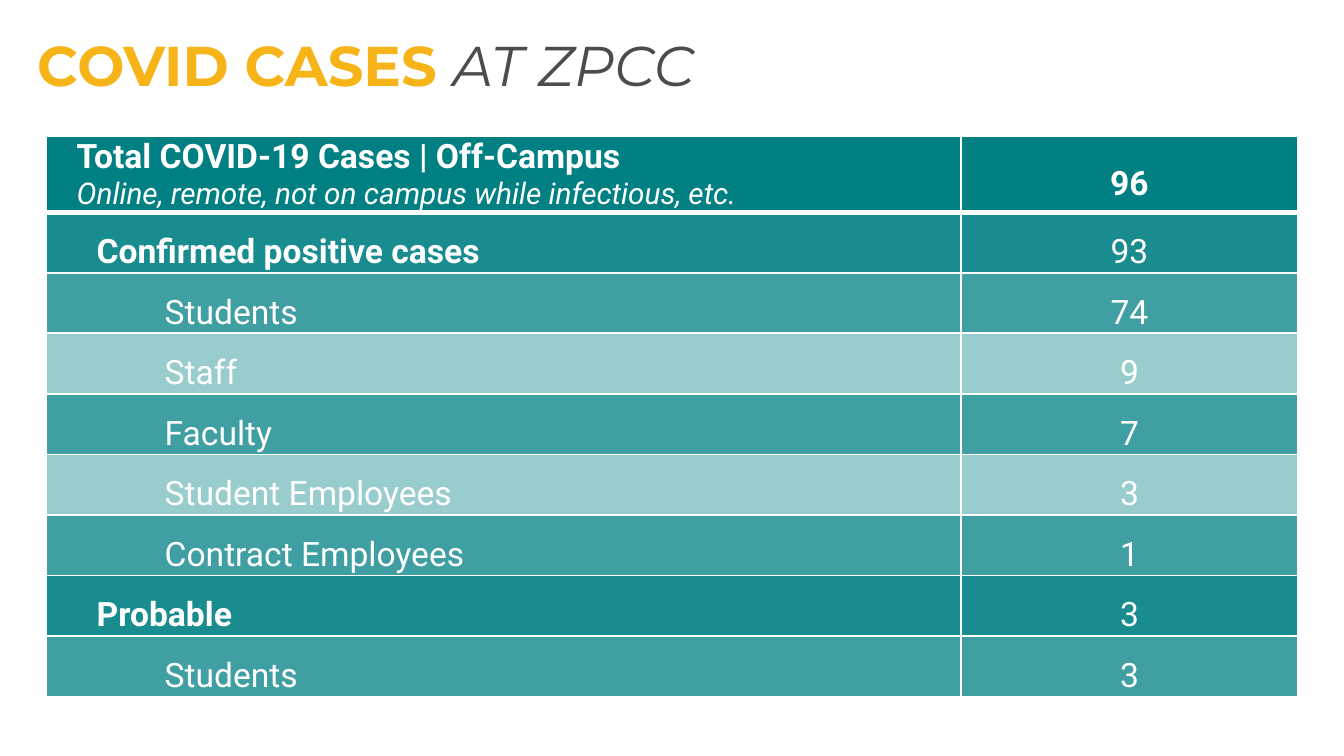
from lxml import etree
from pptx import Presentation
from pptx import util as u
from pptx.dml.color import RGBColor
from pptx.enum import text
from pptx.oxml.ns import qn

GOLD = RGBColor(0xF7, 0xB4, 0x18)
GRAY = RGBColor(0x4C, 0x4C, 0x4E)
TEAL = RGBColor(0x00, 0x80, 0x83)
WHITE = RGBColor(0xFF, 0xFF, 0xFF)

# words, colour, bold, italic
TITLE = [("COVID CASES ", GOLD, True, False), ("AT ZPCC", GRAY, False, True)]

# words, size, bold, italic
HEAD = [("Total COVID-19 Cases | Off-Campus", 18, True, False),
        ("Online, remote, not on campus while infectious, etc.", 16, False, True)]
TOTAL = "96"

# label, count, level, fill opacity in percent
ROWS = [
    ("Confirmed positive cases", "93", 1, 90),
    ("Students", "74", 2, 75),
    ("Staff", "9", 2, 40),
    ("Faculty", "7", 2, 75),
    ("Student Employees", "3", 2, 40),
    ("Contract Employees", "1", 2, 75),
    ("Probable", "3", 1, 90),
    ("Students", "3", 2, 75),
]
INDENT = [24, 44, 112]  # px, by level
COLS = [915, 337]
HEAD_H, ROW_H = 27, 24  # least heights; rows grow to fit their text


def px(n):
    return u.Emu(round(n * 914400 / 134.4))


def add_run(para, words, font, size, color, bold=False, italic=False):
    run = para.add_run()
    run.text = words
    f = run.font
    f.name, f.size, f.bold, f.italic = font, u.Pt(size), bold, italic
    f.color.rgb = color


def style(cell, alpha=100, base=1):
    """Set margins, a see-through teal fill and white borders."""
    cell.margin_left = cell.margin_right = u.Inches(0.05)
    cell.margin_top = cell.margin_bottom = 0
    cell.vertical_anchor = text.MSO_ANCHOR.MIDDLE
    cell.fill.solid()
    cell.fill.fore_color.rgb = TEAL
    props = cell._tc.get_or_add_tcPr()
    if alpha < 100:
        color = props.find(".//" + qn("a:srgbClr"))
        etree.SubElement(color, qn("a:alpha"), val=str(alpha * 1000))
    for i, (side, wide) in enumerate(zip("LRTB", (1, 1, 1, base))):
        line = etree.Element(qn("a:ln" + side), w=str(u.Pt(wide)))
        fill = etree.SubElement(line, qn("a:solidFill"))
        etree.SubElement(fill, qn("a:srgbClr"), val=str(WHITE))
        props.insert(i, line)


def add_label(para, level, *run):
    para._p.get_or_add_pPr().set("indent", str(px(INDENT[level])))
    words, size, bold, italic = run
    add_run(para, words, "Roboto", size, WHITE, bold, italic)


def add_count(cell, words, bold=False):
    para = cell.text_frame.paragraphs[0]
    para.alignment = text.PP_ALIGN.CENTER
    para.line_spacing = 1.5
    add_run(para, words, "Roboto", 18, WHITE, bold)


def add_title(slide):
    box = slide.shapes.add_textbox(px(24), px(24), px(1137), px(82))
    frame = box.text_frame
    frame.word_wrap = True
    frame.auto_size = text.MSO_AUTO_SIZE.SHAPE_TO_FIT_TEXT
    for words, color, bold, italic in TITLE:
        add_run(frame.paragraphs[0], words, "Montserrat", 30, color, bold, italic)


def add_cases(slide):
    frame = slide.shapes.add_table(len(ROWS) + 1, len(COLS),
                                   px(46), px(136), px(sum(COLS)), px(505))
    table = frame.table
    for col, wide in zip(table.columns, COLS):
        col.width = px(wide)
    for i, row in enumerate(table.rows):
        row.height = px(ROW_H if i else HEAD_H)
    frame.height = px(505)

    left, right = table.cell(0, 0), table.cell(0, 1)
    for cell in (left, right):
        style(cell, base=3)
    for i, run in enumerate(HEAD):
        body = left.text_frame
        add_label(body.add_paragraph() if i else body.paragraphs[0], 0, *run)
    add_count(right, TOTAL, True)

    for r, (label, count, level, alpha) in enumerate(ROWS, 1):
        left, right = table.cell(r, 0), table.cell(r, 1)
        for cell in (left, right):
            style(cell, alpha)
        para = left.text_frame.paragraphs[0]
        para.line_spacing = 1.5
        add_label(para, level, label, 18, level == 1, False)
        add_count(right, count)


def main():
    deck = Presentation()
    deck.slide_width, deck.slide_height = px(1344), px(756)
    slide = deck.slides.add_slide(deck.slide_layouts[6])
    add_title(slide)
    add_cases(slide)
    deck.save("out.pptx")


if __name__ == "__main__":
    main()
